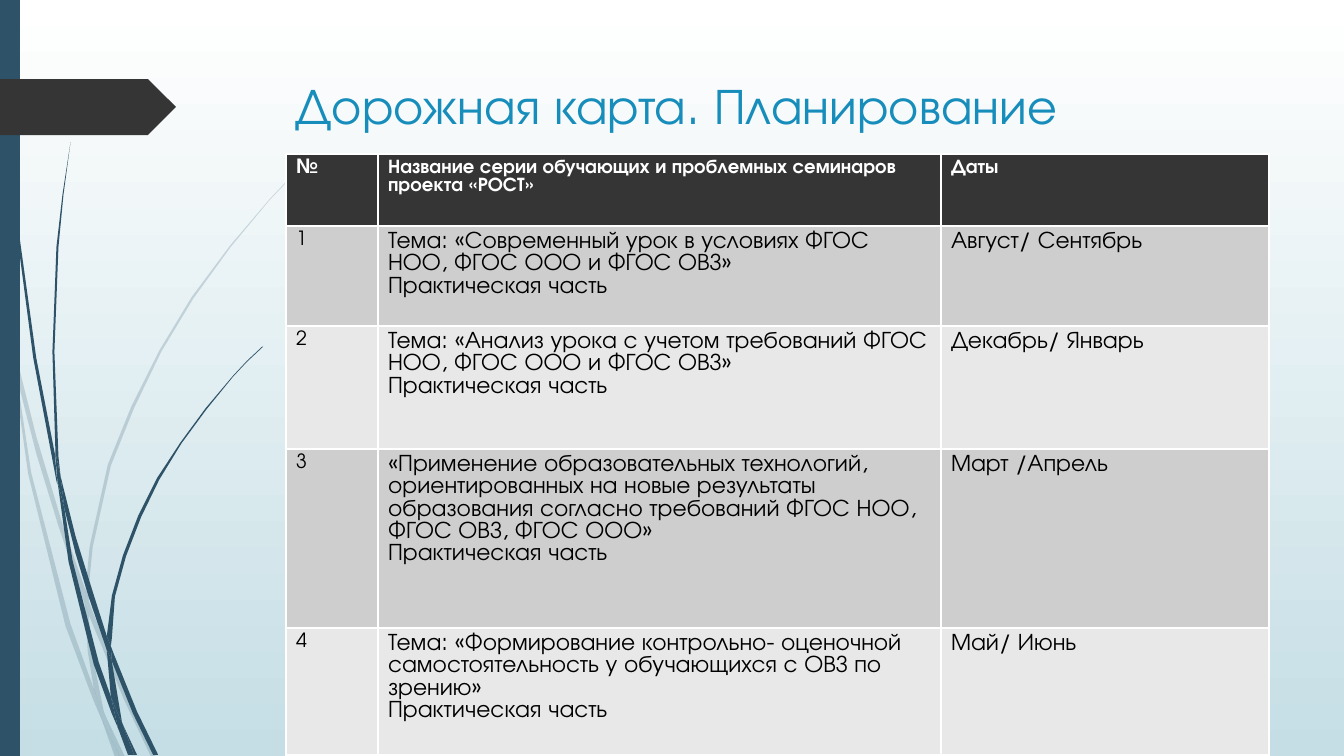
from dataclasses import dataclass

from lxml import etree
from pptx import Presentation
from pptx.dml.color import RGBColor
from pptx.enum.shapes import MSO_SHAPE
from pptx.enum.text import MSO_ANCHOR
from pptx.oxml.ns import qn
from pptx.util import Emu, Pt

RECTANGLE = MSO_SHAPE.RECTANGLE
PENTAGON = MSO_SHAPE.PENTAGON
TOP = MSO_ANCHOR.TOP

SLIDE_WIDTH, SLIDE_HEIGHT = 1344, 756
EMU_PER_PX = 12192000 / SLIDE_WIDTH
EMU_PER_GRASS_UNIT = 9144  # grass outlines are in hundredths of an inch


@dataclass(frozen=True)
class Theme:
    font: str = "TeX Gyre Adventor"
    background: tuple = ("FFFFFF", "C5DEE5")
    grass: str = "2E5369"
    dark: str = "353535"
    title: str = "178DBB"
    white: str = "FFFFFF"
    black: str = "000000"
    bands: tuple = ("CECECE", "E8E8E8")
    title_size: int = 36
    body_size: int = 17
    small_size: int = 14


PALE_GRASS = [
    [(11, 350), (9, 322), (0, 282), (0, 299), (10, 344)],
    [(58, 522), (84, 599), (85, 586), (62, 520), (36, 433), (14, 345), (17, 376), (36, 450)],
    [(92, 607), (88, 596), (88, 610), (123, 694), (150, 751), (155, 751), (127, 692)],
    [(119, 751), (124, 751), (105, 711)],
    [(93, 683), (70, 619), (31, 469), (17, 376), (11, 350), (28, 470), (65, 621),
     (92, 693), (101, 714), (99, 707)],
    [(84, 599), (87, 646), (93, 683), (96, 692), (105, 711), (103, 706), (91, 646),
     (88, 610), (88, 608)],
    [(88, 584), (92, 543), (110, 462), (133, 405), (160, 349), (192, 296), (229, 245),
     (268, 198), (290, 175), (312, 154), (312, 153), (289, 175), (268, 197), (228, 244),
     (190, 295), (158, 348), (130, 404), (107, 461), (89, 542), (85, 584), (85, 586),
     (88, 596)],
    [(101, 714), (114, 751), (119, 751)],
    [(88, 608), (88, 610), (88, 596), (85, 586), (84, 599)],
    [(96, 692), (93, 683), (99, 707), (101, 714), (119, 751), (105, 711)],
]
DARK_GRASS = [
    [(7, 110), (17, 233), (33, 355), (56, 477), (57, 481), (55, 457), (55, 453),
     (36, 355), (19, 232), (8, 109), (5, 48), (4, 0), (3, 0), (4, 48)],
    [(88, 592), (106, 645), (106, 633), (106, 631), (93, 590), (75, 532), (60, 472),
     (64, 505), (75, 549)],
    [(113, 649), (110, 641), (111, 656), (132, 708), (152, 749), (157, 749), (136, 706)],
    [(110, 691), (98, 657), (72, 556), (64, 505), (57, 477), (68, 557), (93, 659),
     (111, 708), (117, 722), (116, 717)],
    [(60, 472), (58, 453), (54, 349), (58, 245), (63, 193), (70, 141), (62, 193),
     (56, 245), (52, 349), (55, 449)],
    [(133, 749), (136, 749), (122, 719)],
    [(57, 477), (64, 505), (60, 472), (55, 449), (55, 453)],
    [(111, 633), (114, 592), (125, 552), (140, 513), (158, 476), (180, 440), (205, 406),
     (231, 374), (245, 359), (261, 344), (260, 344), (245, 358), (231, 373), (204, 405),
     (179, 439), (156, 474), (137, 512), (122, 551), (111, 591), (106, 631), (110, 641)],
    [(117, 722), (127, 749), (131, 749)],
    [(106, 645), (110, 691), (116, 706), (122, 719), (121, 716), (111, 656), (109, 651)],
    [(106, 645), (109, 651), (111, 656), (110, 641), (106, 631), (106, 633)],
    [(116, 706), (110, 691), (116, 717), (117, 722), (130, 749), (133, 749), (122, 719)],
]

PRACTICE = "Практическая часть"
HEADER = ["№", "Название серии обучающих и проблемных семинаров проекта «РОСТ»", "Даты"]
SEMINARS = [
    ("Тема: «Современный урок в условиях ФГОС НОО, ФГОС ООО и ФГОС ОВЗ»",
     "Август/ Сентябрь"),
    ("Тема: «Анализ урока с учетом требований ФГОС НОО, ФГОС ООО и ФГОС ОВЗ»",
     "Декабрь/ Январь"),
    ("«Применение образовательных технологий, ориентированных на новые результаты "
     "образования согласно требований ФГОС НОО, ФГОС ОВЗ, ФГОС ООО»",
     "Март /Апрель"),
    ("Тема: «Формирование контрольно- оценочной самостоятельность у обучающихся "
     "с ОВЗ по зрению»",
     "Май/ Июнь"),
]
COLUMN_WIDTHS = [92, 563, 328]
ROW_HEIGHTS = [72, 100, 123, 179, 127]


def px(length):
    return Emu(round(length * EMU_PER_PX))


class SlideBuilder:
    def __init__(self, slide, theme):
        self.slide = slide
        self.theme = theme

    def background(self):
        fill = self.slide.background.fill
        fill.gradient()
        fill.gradient_angle = 270
        for stop, position, color in zip(fill.gradient_stops, (0, 1), self.theme.background):
            stop.position = position
            stop.color.rgb = RGBColor.from_string(color)

    def paint(self, shape, color):
        shape.shadow.inherit = False
        shape.fill.solid()
        shape.fill.fore_color.rgb = RGBColor.from_string(color)
        shape.line.fill.background()

    def block(self, kind, left, top, width, height, color):
        shape = self.slide.shapes.add_shape(kind, px(left), px(top), px(width), px(height))
        self.paint(shape, color)

    def grass(self, outlines, opacity=100):
        group = self.slide.shapes.add_group_shape()
        for start, *others in outlines:
            builder = group.shapes.build_freeform(*start, scale=EMU_PER_GRASS_UNIT)
            builder.add_line_segments(others, close=True)
            shape = builder.convert_to_shape()
            self.paint(shape, self.theme.grass)
            if opacity < 100:
                color = shape._element.spPr.find(qn("a:solidFill"))[0]
                etree.SubElement(color, qn("a:alpha"), val=str(opacity * 1000))

    def style(self, paragraph, size, color, bold=False):
        font = paragraph.font
        font.name = self.theme.font
        font.size = Pt(size)
        font.bold = bold
        font.color.rgb = RGBColor.from_string(color)

    def title(self, text, left, top, width, height):
        frame = self.slide.shapes.add_textbox(
            px(left), px(top), px(width), px(height)).text_frame
        frame.word_wrap = True
        frame.vertical_anchor = TOP
        frame.text = text
        self.style(frame.paragraphs[0], self.theme.title_size, self.theme.title)

    def table(self, rows, left, top):
        """Add the table; its white rules come from the default table style."""
        theme = self.theme
        table = self.slide.shapes.add_table(
            len(rows), len(COLUMN_WIDTHS), px(left), px(top),
            px(sum(COLUMN_WIDTHS)), px(sum(ROW_HEIGHTS))).table
        for column, width in zip(table.columns, COLUMN_WIDTHS):
            column.width = px(width)
        for row_index, (row, height, texts) in enumerate(zip(table.rows, ROW_HEIGHTS, rows)):
            row.height = px(height)
            header = row_index == 0
            fill = theme.dark if header else theme.bands[(row_index - 1) % 2]
            color = theme.white if header else theme.black
            for column_index, (cell, text) in enumerate(zip(row.cells, texts)):
                cell.fill.solid()
                cell.fill.fore_color.rgb = RGBColor.from_string(fill)
                cell.text = text
                small = header or column_index == 0
                for paragraph in cell.text_frame.paragraphs:
                    self.style(paragraph, theme.small_size if small else theme.body_size,
                               color, bold=header)


def main():
    presentation = Presentation()
    presentation.slide_width = px(SLIDE_WIDTH)
    presentation.slide_height = px(SLIDE_HEIGHT)
    theme = Theme()
    builder = SlideBuilder(presentation.slides.add_slide(presentation.slide_layouts[6]), theme)

    builder.background()
    builder.grass(PALE_GRASS, opacity=20)
    builder.grass(DARK_GRASS)
    builder.block(RECTANGLE, 0, 0, 20, SLIDE_HEIGHT, theme.grass)
    builder.block(PENTAGON, 0, 79, 176, 56, theme.dark)
    builder.title("Дорожная карта. Планирование", 286, 69, 983, 141)
    seminar_rows = [(str(number), f"{topic}\n{PRACTICE}", dates)
                    for number, (topic, dates) in enumerate(SEMINARS, start=1)]
    builder.table([HEADER, *seminar_rows], 286, 154)
    presentation.save("out.pptx")


if __name__ == "__main__":
    main()
